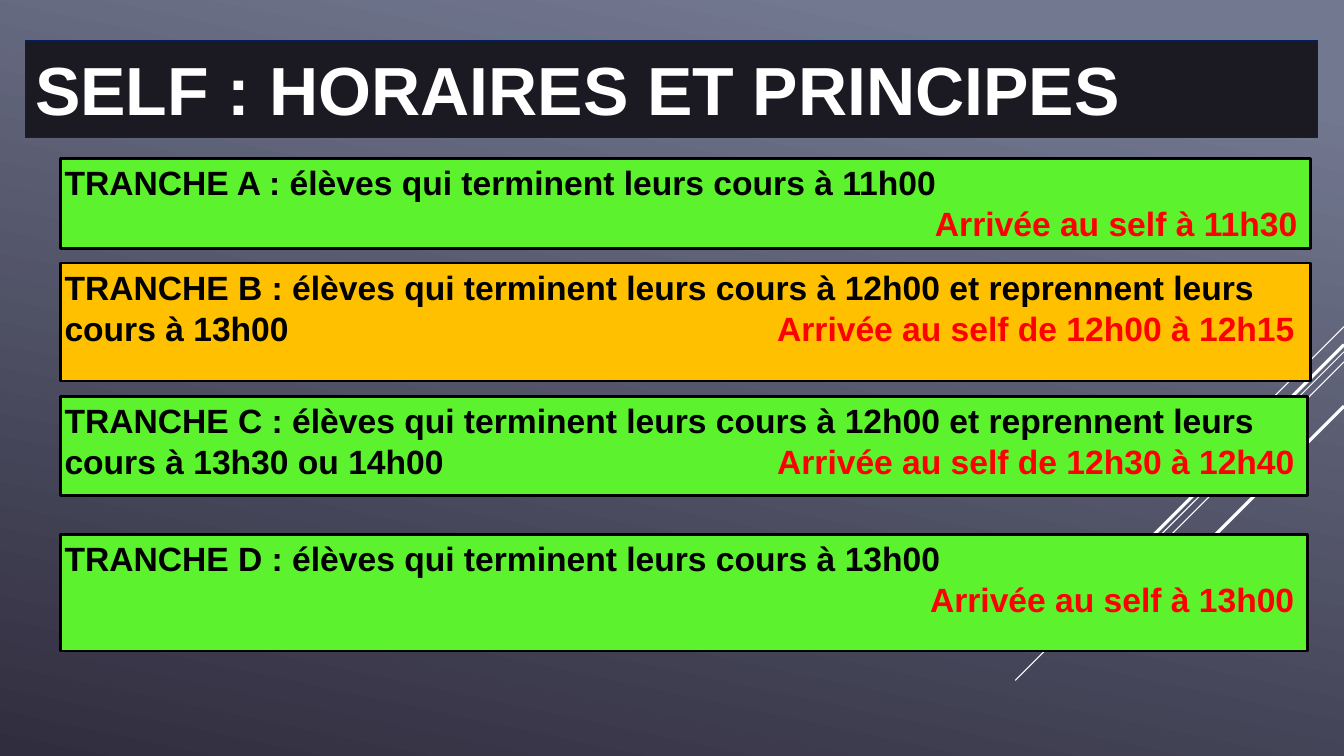
from lxml.etree import SubElement
from pptx import Presentation
from pptx.dml.color import RGBColor
from pptx.enum.shapes import MSO_CONNECTOR as Connector, MSO_SHAPE as Shape
from pptx.enum.text import MSO_ANCHOR as Anchor, MSO_AUTO_SIZE as AutoSize, PP_ALIGN as Align
from pptx.oxml.ns import qn
from pptx.util import Inches, Pt

WIDTH, HEIGHT = 13.33, 7.5
GREEN, AMBER, BLACK, WHITE, RED = "5DF22E", "FFC000", "000000", "FFFFFF", "FF0000"
ARRIVAL_TAB = 12.2

# Diagonal lines from the right edge: top, extent, weight
DIAGONALS = [(3.24, 1, 0.75), (3.49, 3.26, 0.75), (3.59, 2.07, 0.75),
             (3.42, 1.91, 2.25), (4.03, 1.39, 2.25)]

# Time slots: top, width, height, fill, pupils, arrival, arrival on its own line
SLOTS = [
    (1.57, 12.4, 0.9, GREEN, "TRANCHE A : élèves qui terminent leurs cours à 11h00",
     "Arrivée au self à 11h30 ", True),
    (2.61, 12.4, 1.17, AMBER, "TRANCHE B : élèves qui terminent leurs cours à 12h00 "
     "et reprennent leurs cours à 13h00", "Arrivée au self de 12h00 à 12h15", False),
    (3.93, 12.37, 0.99, GREEN, "TRANCHE C : élèves qui terminent leurs cours à 12h00 "
     "et reprennent leurs cours à 13h30 ou 14h00", "Arrivée au self de 12h30 à 12h40", False),
    (5.3, 12.37, 1.16, GREEN, "TRANCHE D : élèves qui terminent leurs cours à 13h00",
     "Arrivée au self à 13h00 ", True),
]


def color(value):
    return RGBColor.from_string(value)


def set_all(target, values):
    for name, value in values.items():
        setattr(target, name, value)


def paint(shape, fill, line, weight):
    shape.fill.solid()
    shape.fill.fore_color.rgb = color(fill)
    shape.line.color.rgb = color(line)
    shape.line.width = Pt(weight)


def add_run(paragraph, text, size, text_color):
    run = paragraph.add_run()
    run.text = text
    set_all(run.font, {"name": "Arial", "size": Pt(size), "bold": True})
    run.font.color.rgb = color(text_color)


def add_right_tab(paragraph, position):
    tabs = SubElement(paragraph._p.get_or_add_pPr(), qn("a:tabLst"))
    SubElement(tabs, qn("a:tab"), pos=str(Inches(position)), algn="r")


def set_background(slide):
    fill = slide.background.fill
    fill.gradient()
    fill.gradient_angle = 258
    for stop, (position, value) in zip(fill.gradient_stops, [(0.1, "727890"), (1, "302D3E")]):
        stop.position = position
        stop.color.rgb = color(value)


def add_diagonal(slide, top, extent, weight):
    line = slide.shapes.add_connector(
        Connector.STRAIGHT, Inches(WIDTH), Inches(top),
        Inches(WIDTH - extent), Inches(top + extent))
    line.line.color.rgb = color(WHITE)
    line.line.width = Pt(weight)
    SubElement(line._element.spPr, qn("a:effectLst"))


def set_title(slide, text):
    title = slide.shapes.title
    set_all(title, {"left": Inches(0.25), "top": Inches(0.4),
                    "width": Inches(12.82), "height": Inches(0.96)})
    paint(title, "1B1A22", "002060", 0.75)
    set_all(title.text_frame, {"vertical_anchor": Anchor.MIDDLE, "word_wrap": True,
                               "auto_size": AutoSize.NONE})
    paragraph = title.text_frame.paragraphs[0]
    paragraph.alignment = Align.LEFT
    add_run(paragraph, text, 48.6, WHITE)


def add_slot(slide, top, width, height, fill, pupils, arrival, own_line):
    box = slide.shapes.add_shape(Shape.RECTANGLE, Inches(0.6), Inches(top),
                                 Inches(width), Inches(height))
    box.shadow.inherit = False
    paint(box, fill, BLACK, 2)
    frame = box.text_frame
    set_all(frame, {"word_wrap": True, "vertical_anchor": Anchor.TOP})
    set_all(frame, {f"margin_{side}": Inches(0.04)
                    for side in ("left", "top", "right", "bottom")})
    paragraph = frame.paragraphs[0]
    paragraph.alignment = Align.LEFT
    add_run(paragraph, pupils, 24, BLACK)
    if own_line:
        paragraph = frame.add_paragraph()
        paragraph.alignment = Align.RIGHT
    else:
        add_right_tab(paragraph, ARRIVAL_TAB)
        arrival = "\t" + arrival
    add_run(paragraph, arrival, 24, RED)


def main():
    presentation = Presentation()
    set_all(presentation, {"slide_width": Inches(WIDTH), "slide_height": Inches(HEIGHT)})
    slide = presentation.slides.add_slide(presentation.slide_layouts[5])

    # Backdrop
    set_background(slide)
    for diagonal in DIAGONALS:
        add_diagonal(slide, *diagonal)

    # Title and time slots
    set_title(slide, "SELF : HORAIRES ET PRINCIPES")
    for slot in SLOTS:
        add_slot(slide, *slot)

    presentation.save("out.pptx")


if __name__ == "__main__":
    main()
